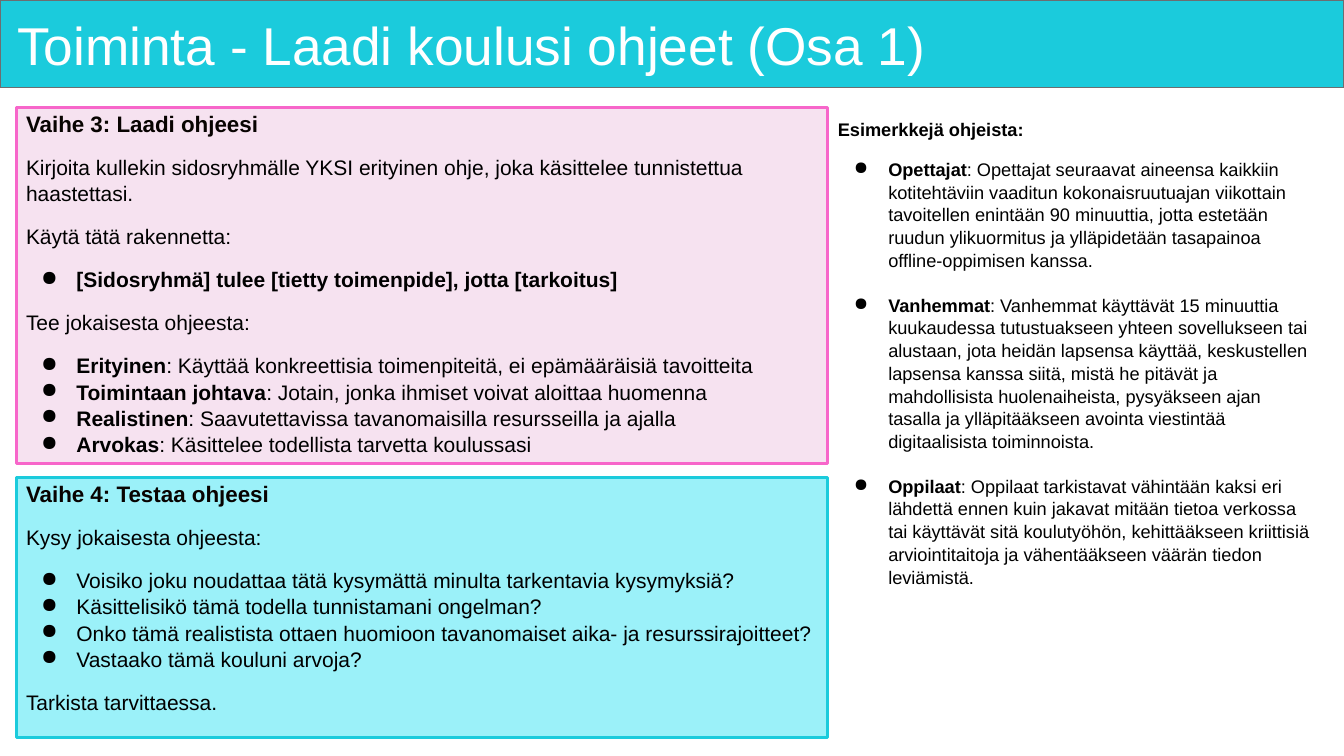
import pptx
import pptx.dml.color
import pptx.enum.shapes
import pptx.enum.text
import pptx.oxml.ns
import pptx.util
from lxml import etree

RGB = pptx.dml.color.RGBColor
WHITE = RGB(0xFF, 0xFF, 0xFF)
BLACK = RGB(0x00, 0x00, 0x00)
HEADING = RGB(0x08, 0x03, 0x01)
TURQUOISE = RGB(0x1B, 0xCB, 0xDC)
PALE_TURQUOISE = RGB(0x9B, 0xF1, 0xF9)
PINK = RGB(0xF7, 0x66, 0xCA)
PALE_PINK = RGB(0xF6, 0xE2, 0xF0)
GREY = RGB(0x6C, 0x6E, 0x70)

WIDTH = pptx.util.Inches(13.33)
HEIGHT = pptx.util.Inches(7.5)
FONT = "Arial"
GAP = 12  # points between blocks of text

# Columns and rows, in percent of the slide: start, extent
MAIN_COLUMN = (1.2, 60.4)
SIDE_COLUMN = (61.6, 37.2)
FULL_WIDTH = (0, 100)
BANNER_ROW = (0, 11.6)
STEP_3_ROW = (14.27, 47.07)
STEP_4_ROW = (63.2, 34.4)
EXAMPLES_ROW = (14.27, 57.47)

# Each paragraph: bold part, plain part, bulleted, space before
STEP_3 = [
    ("", "Kirjoita kullekin sidosryhmälle YKSI erityinen ohje, joka käsittelee "
         "tunnistettua haastettasi.", False, GAP),
    ("", "Käytä tätä rakennetta:", False, GAP),
    ("[Sidosryhmä] tulee [tietty toimenpide], jotta [tarkoitus]", "", True, GAP),
    ("", "Tee jokaisesta ohjeesta:", False, GAP),
    ("Erityinen", ": Käyttää konkreettisia toimenpiteitä, ei epämääräisiä tavoitteita",
     True, GAP),
    ("Toimintaan johtava", ": Jotain, jonka ihmiset voivat aloittaa huomenna", True, 0),
    ("Realistinen", ": Saavutettavissa tavanomaisilla resursseilla ja ajalla", True, 0),
    ("Arvokas", ": Käsittelee todellista tarvetta koulussasi", True, 0),
]
STEP_4 = [
    ("", "Kysy jokaisesta ohjeesta:", False, GAP),
    ("", "Voisiko joku noudattaa tätä kysymättä minulta tarkentavia kysymyksiä?",
     True, GAP),
    ("", "Käsittelisikö tämä todella tunnistamani ongelman?", True, 0),
    ("", "Onko tämä realistista ottaen huomioon tavanomaiset aika- ja "
         "resurssirajoitteet?", True, 0),
    ("", "Vastaako tämä kouluni arvoja?", True, 0),
    ("", "Tarkista tarvittaessa.", False, GAP),
]
EXAMPLE_GAP = 15.6  # one line of the examples
EXAMPLES = [
    ("Opettajat", ": Opettajat seuraavat aineensa kaikkiin kotitehtäviin vaaditun "
     "kokonaisruutuajan viikottain tavoitellen enintään 90 minuuttia, jotta estetään "
     "ruudun ylikuormitus ja ylläpidetään tasapainoa offline-oppimisen kanssa.",
     True, GAP),
    ("Vanhemmat", ": Vanhemmat käyttävät 15 minuuttia kuukaudessa tutustuakseen yhteen "
     "sovellukseen tai alustaan, jota heidän lapsensa käyttää, keskustellen lapsensa "
     "kanssa siitä, mistä he pitävät ja mahdollisista huolenaiheista, pysyäkseen ajan "
     "tasalla ja ylläpitääkseen avointa viestintää digitaalisista toiminnoista.",
     True, EXAMPLE_GAP),
    ("Oppilaat", ": Oppilaat tarkistavat vähintään kaksi eri lähdettä ennen kuin jakavat "
     "mitään tietoa verkossa tai käyttävät sitä koulutyöhön, kehittääkseen kriittisiä "
     "arviointitaitoja ja vähentääkseen väärän tiedon leviämistä.", True, EXAMPLE_GAP),
]


def place(column, row):
    """Turn percent shares into left, top, width and height."""
    return (int(WIDTH * column[0] / 100), int(HEIGHT * row[0] / 100),
            int(WIDTH * column[1] / 100), int(HEIGHT * row[1] / 100))


def add_panel(slide, column, row, fill, border, weight):
    panel = slide.shapes.add_shape(
        pptx.enum.shapes.MSO_SHAPE.RECTANGLE, *place(column, row))
    panel.shadow.inherit = False
    panel.fill.solid()
    panel.fill.fore_color.rgb = fill
    panel.line.color.rgb = border
    panel.line.width = pptx.util.Pt(weight)
    return panel


def prepare_frame(holder, side, end, anchor=pptx.enum.text.MSO_ANCHOR.TOP):
    frame = holder.text_frame
    frame.word_wrap = True
    frame.vertical_anchor = anchor
    frame.margin_left = frame.margin_right = pptx.util.Inches(side)
    frame.margin_top = frame.margin_bottom = pptx.util.Inches(end)
    return frame


def add_run(paragraph, text, size, color, bold=False):
    run = paragraph.add_run()
    run.text = text
    run.font.name = FONT
    run.font.size = pptx.util.Pt(size)
    run.font.bold = bold
    run.font.color.rgb = color


def add_bullet(paragraph, indent):
    qn = pptx.oxml.ns.qn
    properties = paragraph._p.get_or_add_pPr()
    properties.set("marL", str(pptx.util.Inches(0.5)))
    properties.set("indent", str(-pptx.util.Inches(indent)))
    color = etree.SubElement(properties, qn("a:buClr"))
    etree.SubElement(color, qn("a:srgbClr")).set("val", str(BLACK))
    etree.SubElement(properties, qn("a:buChar")).set("char", "●")


def write_heading(frame, text, size, color, spacing, bold=True):
    heading = frame.paragraphs[0]
    heading.alignment = pptx.enum.text.PP_ALIGN.LEFT
    heading.line_spacing = spacing
    add_run(heading, text, size, color, bold)


def write_body(frame, content, size, indent):
    for lead, rest, bulleted, before in content:
        paragraph = frame.add_paragraph()
        paragraph.alignment = pptx.enum.text.PP_ALIGN.LEFT
        paragraph.line_spacing = 1.04
        paragraph.space_before = pptx.util.Pt(before)
        if bulleted:
            add_bullet(paragraph, indent)
        if lead:
            add_run(paragraph, lead, size, BLACK, bold=True)
        if rest:
            add_run(paragraph, rest, size, BLACK)


def add_step(slide, row, fill, border, heading, content):
    panel = add_panel(slide, MAIN_COLUMN, row, fill, border, 2.25)
    frame = prepare_frame(panel, 0.1, 0.05)
    write_heading(frame, heading, 16, HEADING, 0.9)
    write_body(frame, content, 15, 0.35)


def add_title(slide, text):
    add_panel(slide, FULL_WIDTH, BANNER_ROW, TURQUOISE, GREY, 1)
    title = slide.shapes.add_textbox(*place((0.83, 97.97), (1.2, 10.4)))
    frame = prepare_frame(title, 0.06, 0.06, pptx.enum.text.MSO_ANCHOR.MIDDLE)
    write_heading(frame, text, 38, WHITE, 0.9, bold=False)


def add_examples(slide):
    examples = slide.shapes.add_textbox(*place(SIDE_COLUMN, EXAMPLES_ROW))
    frame = prepare_frame(examples, 0.1, 0.1)
    write_heading(frame, "Esimerkkejä ohjeista:", 13, BLACK, 1.04)
    write_body(frame, EXAMPLES, 13, 0.34)


def main():
    deck = pptx.Presentation()
    deck.slide_width, deck.slide_height = WIDTH, HEIGHT
    slide = deck.slides.add_slide(deck.slide_layouts[6])

    # Title banner
    add_title(slide, "Toiminta - Laadi koulusi ohjeet (Osa 1)")
    # Steps on the left
    add_step(slide, STEP_3_ROW, PALE_PINK, PINK, "Vaihe 3: Laadi ohjeesi", STEP_3)
    add_step(slide, STEP_4_ROW, PALE_TURQUOISE, TURQUOISE,
             "Vaihe 4: Testaa ohjeesi", STEP_4)
    # Examples on the right
    add_examples(slide)

    deck.save("out.pptx")


if __name__ == "__main__":
    main()
